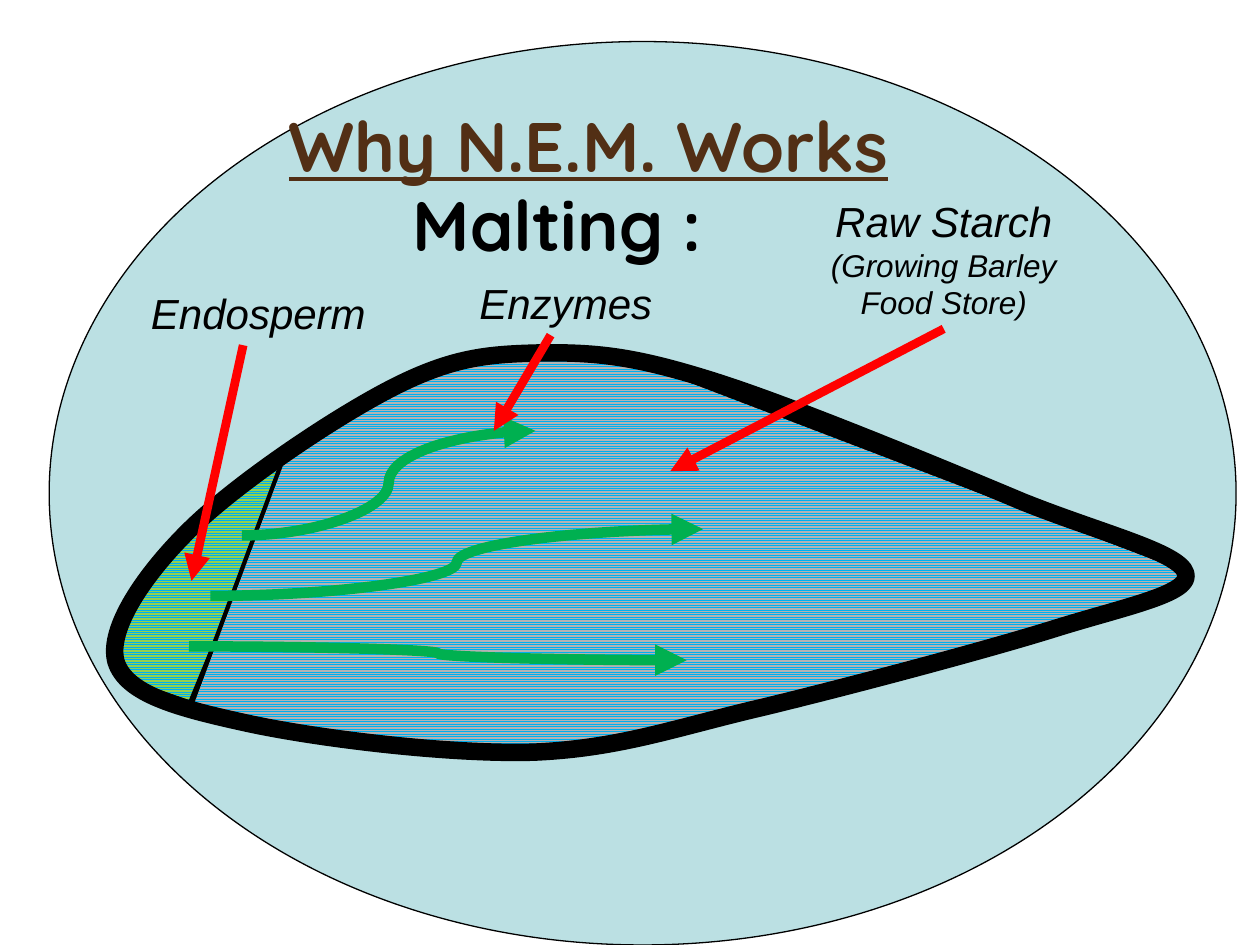
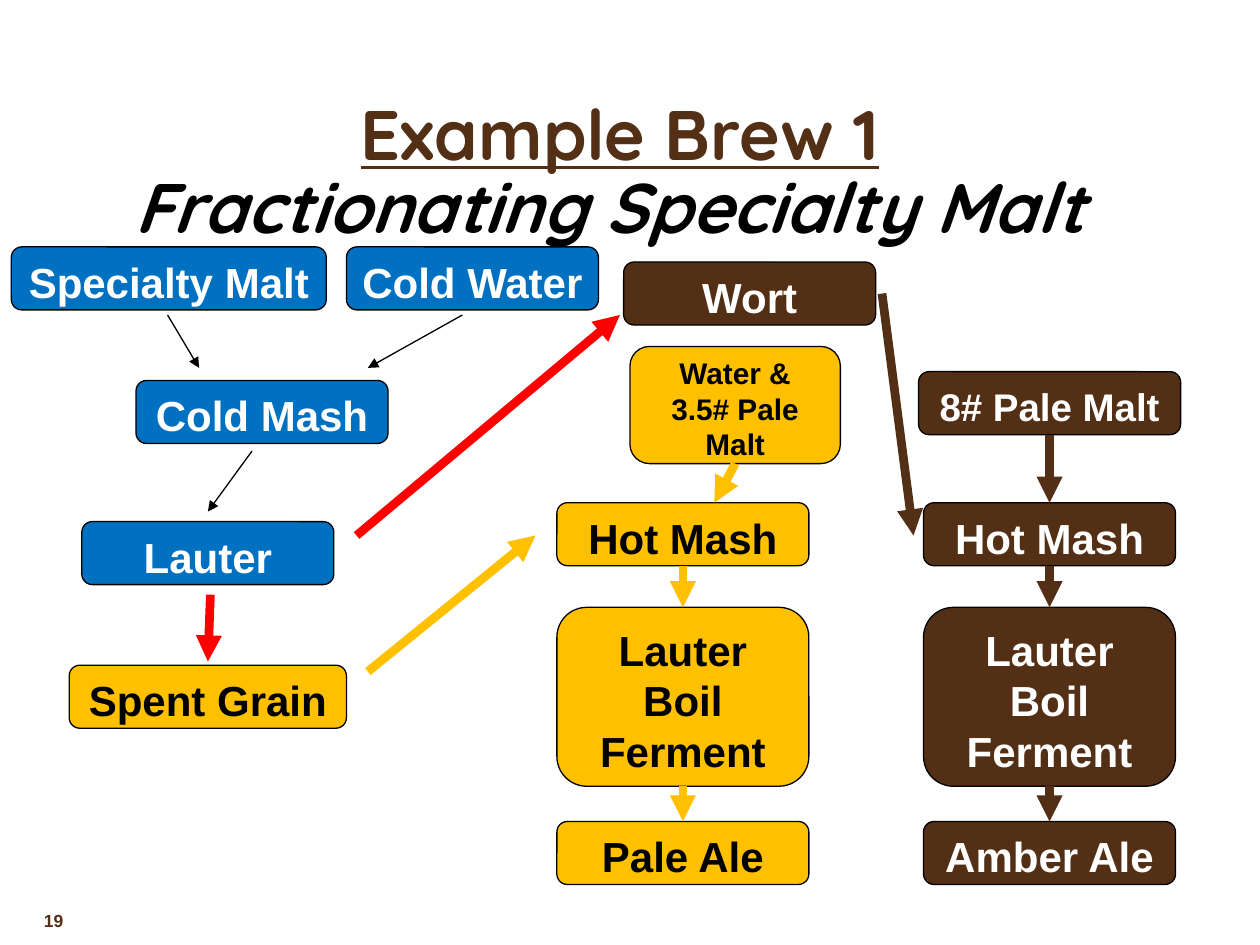
from lxml.etree import SubElement
from pptx import Presentation
from pptx.dml.color import RGBColor
from pptx.enum.dml import MSO_PATTERN
from pptx.enum.shapes import MSO_CONNECTOR, MSO_SHAPE
from pptx.enum.text import MSO_ANCHOR, MSO_AUTO_SIZE, PP_ALIGN
from pptx.oxml.ns import qn
from pptx.util import Emu, Pt

PX = 9144  # one px is a hundredth of an inch
COLORS = {
    "black": "000000", "white": "FFFFFF", "brown": "522F15", "pale": "BBE0E3",
    "red": "FF0000", "green": "00B050", "lime": "92D050", "sky": "00B0F0",
    "blue": "0070C0", "amber": "FFC000", "gray": "A6A6A6", "silver": "B3B3B3",
}
TITLE_FONT, BODY_FONT = "Quicksand", "Arial"
TOP, BOTTOM = 0, 2  # connection sites

GERM = [(1, 245), (32, 173), (109, 102), (146, 79), (63, 281), (23, 267)]
STARCH = [(138, 76), (238, 16), (317, 3), (415, 6), (847, 171), (849, 179),
          (789, 206), (418, 306), (384, 314), (223, 311), (107, 294), (60, 285)]
HUSK_START = (851, 175)
HUSK_CURVES = [
    ((846, 158), (783, 143), (721, 118)),
    ((659, 92), (541, 43), (478, 23)),
    ((415, 3), (386, 0), (344, 0)),
    ((302, 1), (274, 2), (227, 25)),
    ((180, 48), (100, 102), (62, 139)),
    ((25, 175), (-5, 219), (2, 245)),
    ((10, 271), (51, 282), (106, 294)),
    ((161, 306), (266, 319), (334, 317)),
    ((403, 314), (448, 297), (517, 281)),
    ((587, 264), (696, 235), (750, 218)),
    ((805, 201), (856, 191), HUSK_START),
]
ENZYME_PATHS = [((102, 145), (335, 62)), ((77, 193), (468, 140)),
                ((60, 233), (455, 244))]


def color(name):
    return RGBColor.from_string(COLORS[name])


def emu(lengths):
    return [Emu(round(length * PX)) for length in lengths]


def set_line(shape, name, width):
    shape.line.color.rgb = color(name)
    shape.line.width = Pt(width)


def format_span(span, size, name, font=BODY_FONT, **styles):
    span.font.size = Pt(size)
    span.font.name = font
    span.font.color.rgb = color(name)
    for style, value in styles.items():
        setattr(span.font, style, value)


def prepare_frame(shape, anchor=MSO_ANCHOR.TOP):
    frame = shape.text_frame
    frame.word_wrap = True
    frame.auto_size = MSO_AUTO_SIZE.NONE
    frame.vertical_anchor = anchor
    return frame


def write_line(shape, text, align, size, name, **styles):
    frame = prepare_frame(shape)
    frame.text = text
    para = frame.paragraphs[0]
    para.alignment = align
    format_span(para.runs[0], size, name, **styles)


def add_heading(page, text, box):
    title = page.shapes.title
    title.left, title.top, title.width, title.height = emu(box)
    write_line(title, text, PP_ALIGN.CENTER, 40, "brown", font=TITLE_FONT,
               bold=True, underline=True)
    return title


def add_subheading(page, text, box, italic=False):
    write_line(page.shapes.add_textbox(*emu(box)), text, PP_ALIGN.CENTER, 40,
               "black", font=TITLE_FONT, bold=True, italic=italic)


def add_arrow(page, start, end, name, width, kind=MSO_CONNECTOR.STRAIGHT):
    arrow = page.shapes.add_connector(kind, *emu((*start, *end)))
    set_line(arrow, name, width)
    properties = arrow.element.spPr
    SubElement(properties.find(qn("a:ln")), qn("a:tailEnd"), type="triangle")
    SubElement(properties, qn("a:effectLst"))
    return arrow


def add_outline(page, origin, points, shift=(0, 0)):
    """Closed polygon whose points are relative to origin plus shift."""
    left, top = origin[0] + shift[0], origin[1] + shift[1]
    corners = [tuple(emu((left + x, top + y))) for x, y in points]
    builder = page.shapes.build_freeform(*corners[0], scale=1.0)
    builder.add_line_segments(corners[1:], close=True)
    shape = builder.convert_to_shape()
    shape.shadow.inherit = False
    return shape


def add_curved_outline(page, origin, start, curves):
    """Closed outline whose sides are cubic curves."""
    shape = add_outline(page, origin, [start] + [curve[-1] for curve in curves])
    sides = list(shape.element.iter(qn("a:lnTo")))
    for side, curve in zip(sides, curves):
        side.tag = qn("a:cubicBezTo")
        for knot in side.findall(qn("a:pt")):
            side.remove(knot)
        for x, y in curve:
            across, down = emu((origin[0] + x, origin[1] + y))
            SubElement(side, qn("a:pt"), x=str(across - shape.left),
                       y=str(down - shape.top))
    return shape


def fill_plain(shape, name):
    shape.fill.solid()
    shape.fill.fore_color.rgb = color(name)


def fill_stripes(shape, back):
    shape.fill.patterned()
    shape.fill.pattern = MSO_PATTERN.LIGHT_HORIZONTAL
    shape.fill.fore_color.rgb = color("sky")
    shape.fill.back_color.rgb = color(back)


def draw_kernel(page, left, top):
    origin = (left, top)
    germ = add_outline(page, origin, GERM)
    fill_plain(germ, "lime")
    striped_germ = add_outline(page, origin, GERM, (-2, -3))
    fill_stripes(striped_germ, "lime")
    starch = add_outline(page, origin, STARCH)
    fill_plain(starch, "gray")
    for shape in (germ, striped_germ, starch):
        set_line(shape, "black", 2.75)
    striped_starch = add_outline(page, origin, STARCH, (1, 2))
    fill_stripes(striped_starch, "silver")
    striped_starch.line.fill.background()
    husk = add_curved_outline(page, origin, HUSK_START, HUSK_CURVES)
    husk.fill.background()
    set_line(husk, "black", 10)
    for start, end in ENZYME_PATHS:
        ends = [(left + x, top + y) for x, y in (start, end)]
        add_arrow(page, *ends, "green", 6, MSO_CONNECTOR.CURVE)


def add_label(page, spans, box, start, target):
    """Italic label with a red arrow from start, just below it, to target."""
    label = page.shapes.add_textbox(*emu(box))
    para = prepare_frame(label).paragraphs[0]
    para.alignment = PP_ALIGN.CENTER
    for text, size in spans:
        span = para.add_run()
        span.text = text
        format_span(span, size, "black", italic=True)
    arrow = add_arrow(page, start, target, "red", 5)
    left, top, width, height = box
    if start == (left + width / 2, top + height):
        arrow.begin_connect(label, BOTTOM)


def build_malting(page):
    backdrop = page.shapes.add_shape(MSO_SHAPE.OVAL, *emu((39, 33, 942, 717)))
    backdrop.shadow.inherit = False
    fill_plain(backdrop, "pale")
    set_line(backdrop, "black", 0.75)
    title = add_heading(page, "Why N.E.M. Works", (42, 76, 850, 92))
    backdrop.element.addnext(title.element)
    add_subheading(page, "Malting :", (1, 139, 883, 83))
    draw_kernel(page, 90, 280)
    add_label(page, [("Raw Starch ", 24), ("(Growing Barley Food Store)", 18)],
              (633, 150, 232, 111), (749, 261), (532, 374))
    add_label(page, [("Endosperm", 24)], (89, 223, 232, 50), (193, 274), (152, 461))
    add_label(page, [("Enzymes", 24)], (333, 215, 232, 50), (437, 266), (392, 342))


def add_step(page, lines, box, name, size=24):
    step = page.shapes.add_shape(MSO_SHAPE.ROUNDED_RECTANGLE, *emu(box))
    step.shadow.inherit = False
    fill_plain(step, name)
    set_line(step, "black", 0.75)
    frame = prepare_frame(step, MSO_ANCHOR.MIDDLE)
    frame.margin_left, frame.margin_right, frame.margin_top, frame.margin_bottom = emu(
        (5, 5, 5, 0))
    frame.text = "\n".join(lines)
    for para in frame.paragraphs:
        para.alignment = PP_ALIGN.CENTER
        format_span(para.runs[0], size, "black" if name == "amber" else "white", bold=True)
    return step


def join_steps(page, upper, lower, name):
    arrow = add_arrow(page, (0, 0), (0, 0), name, 5)
    arrow.begin_connect(upper, BOTTOM)
    arrow.end_connect(lower, TOP)


def draw_brew(page, left, top, ale, name):
    """Column from hot mash to finished ale; returns its first step."""
    parts = [(["Hot Mash"], 0, 50), (["Lauter", "Boil", "Ferment"], 83, 142),
             ([ale], 253, 50)]
    steps = [add_step(page, lines, (left, top + drop, 200, height), name)
             for lines, drop, height in parts]
    for upper, lower in zip(steps, steps[1:]):
        join_steps(page, upper, lower, name)
    return steps[0]


def draw_cold_side(page, left, top):
    parts = [("Specialty Malt", 0, 0, 250, "blue"), ("Cold Water", 266, 0, 200, "blue"),
             ("Cold Mash", 99, 106, 200, "blue"), ("Lauter", 56, 218, 200, "blue"),
             ("Spent Grain", 46, 332, 220, "amber")]
    for text, x, y, width, name in parts:
        add_step(page, [text], (left + x, top + y, width, 50), name)
    arrows = [((124, 54), (149, 96), "black", 0.75), ((358, 54), (283, 96), "black", 0.75),
              ((191, 162), (156, 210), "black", 0.75), ((158, 276), (156, 329), "red", 5),
              ((274, 229), (483, 54), "red", 5), ((283, 337), (416, 229), "amber", 5)]
    for start, end, name, width in arrows:
        ends = [(left + x, top + y) for x, y in (start, end)]
        add_arrow(page, *ends, name, width)


def build_brew(page):
    write_line(page.shapes.add_textbox(*emu((25, 717, 208, 33))), "19",
               PP_ALIGN.LEFT, 10, "brown", bold=True)
    add_heading(page, "Example Brew 1", (67, 67, 850, 92))
    add_subheading(page, "Fractionating Specialty Malt", (42, 125, 883, 83), italic=True)
    draw_cold_side(page, 9, 196)

    add_step(page, ["Wort"], (495, 208, 200, 50), "brown")
    add_arrow(page, (700, 233), (725, 425), "brown", 5)
    pale_malt = add_step(page, ["8# Pale Malt"], (729, 295, 208, 50), "brown", 22)
    amber_mash = draw_brew(page, 733, 399, "Amber Ale", "brown")
    join_steps(page, pale_malt, amber_mash, "brown")

    draw_brew(page, 442, 399, "Pale Ale", "amber")
    infusion = add_step(page, ["Water &", "3.5# Pale Malt"], (500, 275, 167, 93), "amber", 17)
    arrow = add_arrow(page, (583, 368), (567, 399), "amber", 5)
    arrow.begin_connect(infusion, BOTTOM)


def main():
    deck = Presentation()
    deck.slide_width, deck.slide_height = emu((1000, 750))
    for build in (build_malting, build_brew):
        build(deck.slides.add_slide(deck.slide_layouts[5]))
    deck.save("out.pptx")


if __name__ == "__main__":
    main()
